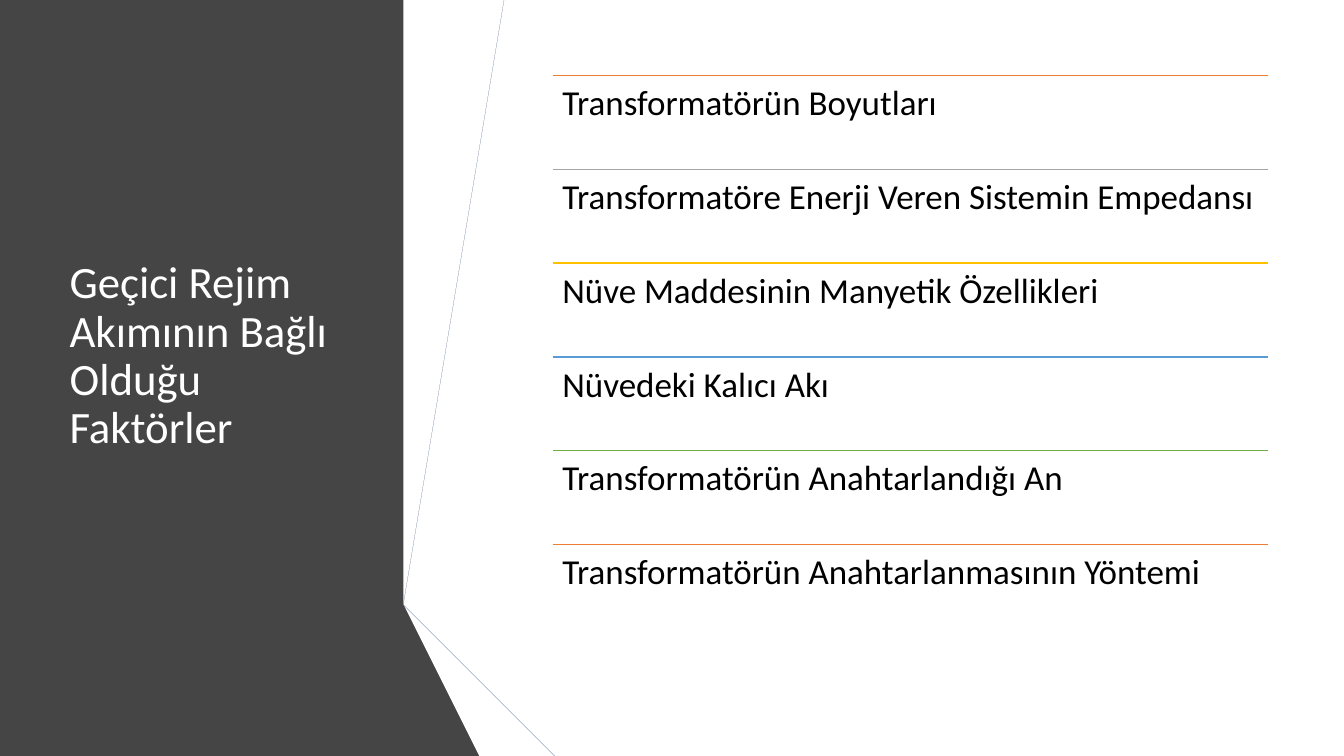
"""Builds the slide on the factors behind the transient regime current."""
from lxml import etree
from pptx import Presentation
from pptx.dml.color import RGBColor
from pptx.enum.shapes import MSO_CONNECTOR
from pptx.enum.text import MSO_ANCHOR, MSO_AUTO_SIZE, PP_ALIGN
from pptx.oxml.ns import qn
from pptx.util import Inches, Pt

STRAIGHT = MSO_CONNECTOR.STRAIGHT
TOP, MIDDLE = MSO_ANCHOR.TOP, MSO_ANCHOR.MIDDLE
LEFT = PP_ALIGN.LEFT
NO_FIT = MSO_AUTO_SIZE.NONE
TITLE_ONLY = 5

THEME = {
    "font": "Calibri", "title_size": 32, "item_size": 25, "rule_width": 1,
    "light": "FFFFFF", "dark": "000000", "panel": "454545",
    "blue": "4472C4", "blue_fold": "2F5597", "blue_edge": "203864",
    "gray": "595959", "gray_fold": "404040", "gray_edge": "262626",
    "rules": ["ED7D31", "A5A5A5", "FFC000", "5B9BD5", "70AD47"],
}
W, H = 13.33, 7.5
LIST_X, LIST_W = 5.48, 7.1
MARGIN_Y, ROW_H = H / 10, 0.93

BANDS = [
    ("panel", [(0, 0), (4.49, 0), (3.56, 5.75), (4.82, H), (0, H)]),
    ("blue", [(3.96, 5.78), (4.23, 5.83), (5.19, 0), (4.91, 0)]),
    ("gray", [(4.85, 0), (4.57, 0), (3.63, 5.73), (3.9, 5.77)]),
    ("gray_edge", [(3.63, 5.73), (4.91, H), (4.97, H)]),
    ("blue_edge", [(3.96, 5.79), (5.54, H), (5.6, H)]),
    ("blue_fold", [(3.96, 5.78), (5.6, H), (6.29, H), (4.23, 5.83)]),
    ("gray_fold", [(3.63, 5.73), (4.97, H), (5.48, H), (3.95, 5.83), (3.9, 5.77)]),
]
FACTORS = [
    "Transformatörün Boyutları",
    "Transformatöre Enerji Veren Sistemin Empedansı",
    "Nüve Maddesinin Manyetik Özellikleri",
    "Nüvedeki Kalıcı Akı",
    "Transformatörün Anahtarlandığı An",
    "Transformatörün Anahtarlanmasının Yöntemi",
]


def rgb(name):
    return RGBColor.from_string(THEME.get(name, name))


def write(sp, text, size, color, anchor):
    tf = sp.text_frame
    tf.text = text
    tf.word_wrap = True
    tf.auto_size = NO_FIT
    tf.vertical_anchor = anchor
    tf.margin_left = tf.margin_right = Inches(0.1)
    if anchor == TOP:
        tf.margin_top = tf.margin_bottom = Inches(0.1)
    p = tf.paragraphs[0]
    p.alignment = LEFT
    p.line_spacing = 0.9
    font = p.runs[0].font
    font.name = THEME["font"]
    font.size = Pt(THEME[size])
    font.color.rgb = rgb(color)


prs = Presentation()
prs.slide_width, prs.slide_height = Inches(W), Inches(H)
s = prs.slides.add_slide(prs.slide_layouts[TITLE_ONLY])

for color, points in BANDS:
    outline = s.shapes.build_freeform(*points[0], scale=Inches(1))
    outline.add_line_segments(points[1:], close=True)
    sp = outline.convert_to_shape()
    sp.shadow.inherit = False
    sp.fill.solid()
    sp.fill.fore_color.rgb = rgb(color)
    sp.line.fill.background()

title = s.shapes.title
title.left, title.top = Inches(0.59), Inches(MARGIN_Y)
title.width, title.height = Inches(3.04), Inches(6 * ROW_H)
write(title, "Geçici Rejim Akımının Bağlı Olduğu Faktörler", "title_size", "light", MIDDLE)
title.element.getparent().append(title.element)

for i, factor in enumerate(FACTORS):
    x, y = Inches(LIST_X), Inches(MARGIN_Y + i * ROW_H)
    rule = s.shapes.add_connector(STRAIGHT, x, y, x + Inches(LIST_W), y)
    rule.line.color.rgb = rgb(THEME["rules"][i % len(THEME["rules"])])
    rule.line.width = Pt(THEME["rule_width"])
    etree.SubElement(rule.element.spPr, qn("a:effectLst"))
    box = s.shapes.add_textbox(x, y, Inches(LIST_W), Inches(ROW_H))
    write(box, factor, "item_size", "dark", TOP)

prs.save("out.pptx")
